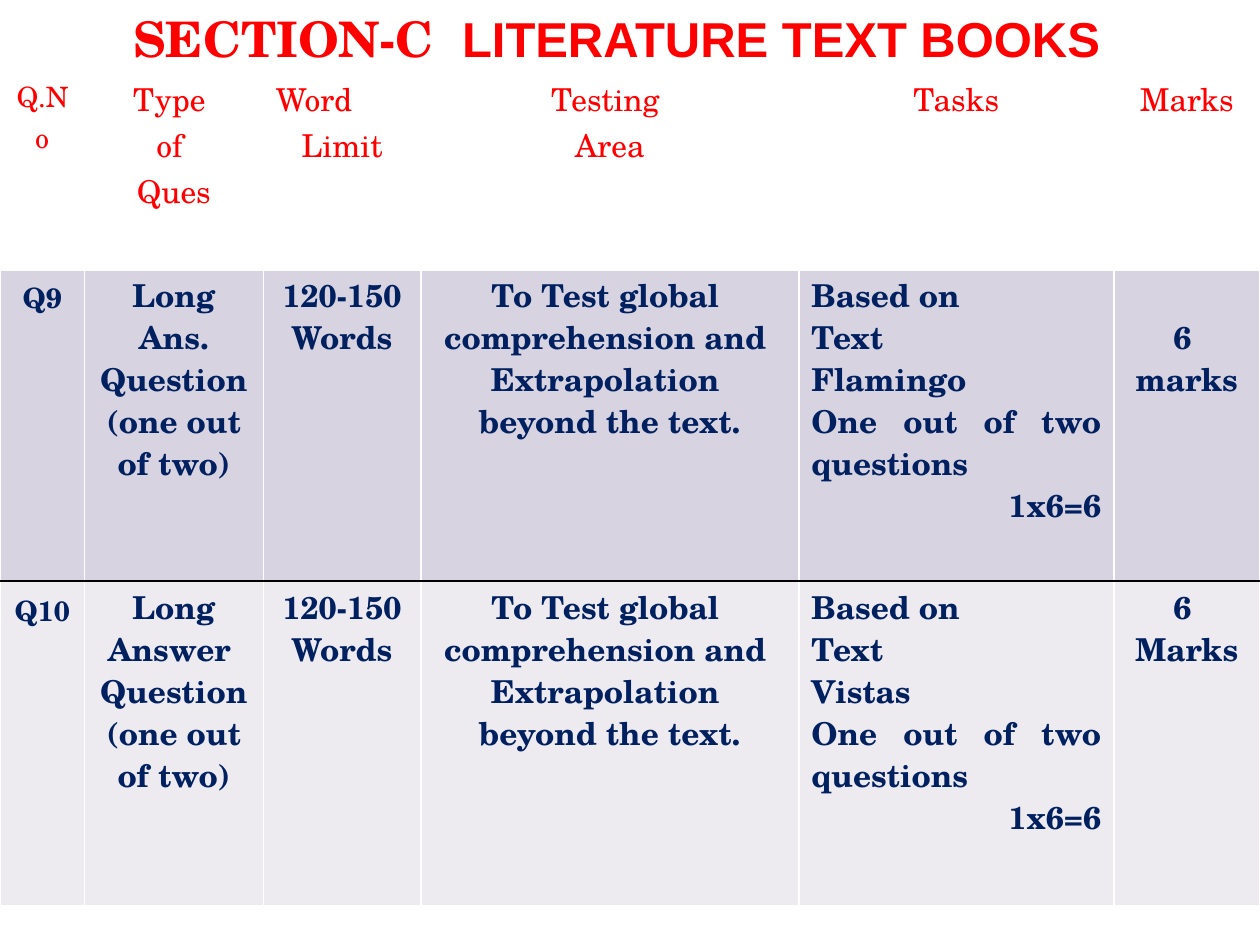
from dataclasses import dataclass

from lxml.etree import SubElement
from pptx import Presentation
from pptx.dml.color import RGBColor
from pptx.enum.text import MSO_AUTO_SIZE, PP_ALIGN as Align
from pptx.oxml.ns import qn
from pptx.util import Inches, Pt


@dataclass(frozen=True)
class Theme:
    serif: str = "TeX Gyre Schola"
    sans: str = "Arial"
    red: str = "FF0000"
    navy: str = "002060"
    white: str = "FFFFFF"
    black: str = "000000"
    lilac: str = "D8D3E0"
    pale_lilac: str = "EDEAF0"
    title_size: int = 28
    cell_size: int = 18
    number_size: int = 16
    line_pitch: int = 24


@dataclass(frozen=True)
class Entry:
    """One table cell: its paragraphs and how they are aligned."""
    lines: tuple[str, ...]
    align: Align = Align.CENTER
    first: Align | None = None
    last: Align | None = None
    lines_down: int = 0


@dataclass(frozen=True)
class RowStyle:
    fill: str
    color: str
    bold: bool
    pitch: int | None
    borders: dict[str, tuple[str, float]]


THEME = Theme()
COLUMN_WIDTHS = (0.67, 1.42, 1.25, 3, 2.5, 1.16)
ROW_HEIGHTS = (1.6, 2.48, 2.58)


def set_font(font, **values) -> None:
    color = values.pop("color")
    for attribute, value in values.items():
        setattr(font, attribute, value)
    font.color.rgb = RGBColor.from_string(color)


def row_style(fill: str, top: str, bottom: str, header: bool = False) -> RowStyle:
    side = (THEME.white, 1)
    borders = {"L": side, "R": side, "T": (top, 1), "B": (bottom, 3 if header else 1)}
    return RowStyle(fill, THEME.red if header else THEME.navy, not header,
                    None if header else THEME.line_pitch, borders)


def draw_border(cell, side: str, color: str, width: float) -> None:
    line = SubElement(cell._tc.get_or_add_tcPr(), qn(f"a:ln{side}"), w=str(Pt(width)))
    solid = SubElement(line, qn("a:solidFill"))
    SubElement(solid, qn("a:srgbClr"), val=color)


def fill_cell(cell, entry: Entry, style: RowStyle, size: int) -> None:
    for side, (color, width) in style.borders.items():
        draw_border(cell, side, color, width)
    cell.fill.solid()
    cell.fill.fore_color.rgb = RGBColor.from_string(style.fill)
    cell.margin_left = cell.margin_right = Inches(0.1)
    cell.margin_bottom = Inches(0.07)
    cell.margin_top = Inches(0.07) + Pt(THEME.line_pitch * entry.lines_down)

    frame = cell.text_frame
    frame.text = "\n".join(entry.lines)
    for paragraph in frame.paragraphs:
        paragraph.alignment = entry.align
        if style.pitch:
            paragraph.line_spacing = Pt(style.pitch)
        set_font(paragraph.runs[0].font, name=THEME.serif, size=Pt(size),
                 bold=style.bold, color=style.color)
    if entry.first is not None:
        frame.paragraphs[0].alignment = entry.first
    if entry.last is not None:
        frame.paragraphs[-1].alignment = entry.last


def question_row(number: str, kind: tuple[str, ...], book: str, marks: Entry) -> list[Entry]:
    return [
        Entry((number,)),
        Entry((*kind, "Question", "(one out of two)")),
        Entry(("120-150", "Words")),
        Entry(("To Test global ", "comprehension and ", "Extrapolation ", "beyond the text.")),
        Entry(("Based on ", "Text", book, "One out of two questions", "1x6=6"),
              align=Align.JUSTIFY, last=Align.RIGHT),
        marks,
    ]


def draw_table(slide, rows: list[tuple[RowStyle, list[Entry]]]) -> None:
    table = slide.shapes.add_table(len(rows), len(COLUMN_WIDTHS), Inches(0), Inches(0.53),
                                   Inches(10), Inches(sum(ROW_HEIGHTS))).table
    table.horz_banding = False
    for column, width in zip(table.columns, COLUMN_WIDTHS):
        column.width = Inches(width)
    for table_row, height, (style, entries) in zip(table.rows, ROW_HEIGHTS, rows):
        table_row.height = Inches(height)
        for index, (cell, entry) in enumerate(zip(table_row.cells, entries)):
            fill_cell(cell, entry, style, THEME.cell_size if index else THEME.number_size)


def draw_title(slide) -> None:
    box = slide.shapes.add_textbox(Inches(0), Inches(0.02), Inches(10), Inches(0.57))
    frame = box.text_frame
    frame.word_wrap = True
    frame.auto_size = MSO_AUTO_SIZE.SHAPE_TO_FIT_TEXT
    frame.margin_right = Inches(0.31)
    heading = frame.paragraphs[0]
    heading.alignment = Align.CENTER
    pieces = (("SECTION-C", THEME.serif, 0), (" ", THEME.serif, 8),
              ("LITERATURE TEXT BOOKS", THEME.sans, 0))
    for text, typeface, spacing in pieces:
        run = heading.add_run()
        run.text = text
        set_font(run.font, name=typeface, size=Pt(THEME.title_size), bold=True, color=THEME.red)
        if spacing:  # widen the gap between the two halves
            run.font._element.set("spc", str(spacing * 100))


def main() -> None:
    deck = Presentation()
    deck.slide_width, deck.slide_height = Inches(10), Inches(7.5)
    slide = deck.slides.add_slide(deck.slide_layouts[6])

    # Question table
    headings = [
        Entry(("Q.No",)),
        Entry(("Type ", "of ", "Ques")),
        Entry(("Word", "Limit"), first=Align.LEFT),
        Entry(("Testing ", "Area")),
        Entry(("Tasks",)),
        Entry(("Marks",)),
    ]
    draw_table(slide, [
        (row_style(THEME.white, THEME.white, THEME.white, header=True), headings),
        (row_style(THEME.lilac, THEME.white, THEME.black),
         question_row("Q9", ("Long", "Ans."), "Flamingo", Entry(("6 ", "marks"), lines_down=1))),
        (row_style(THEME.pale_lilac, THEME.black, THEME.white),
         question_row("Q10", ("Long Answer ",), "Vistas", Entry(("6 ", "Marks")))),
    ])

    # Title over the table
    draw_title(slide)
    deck.save("out.pptx")


if __name__ == "__main__":
    main()
